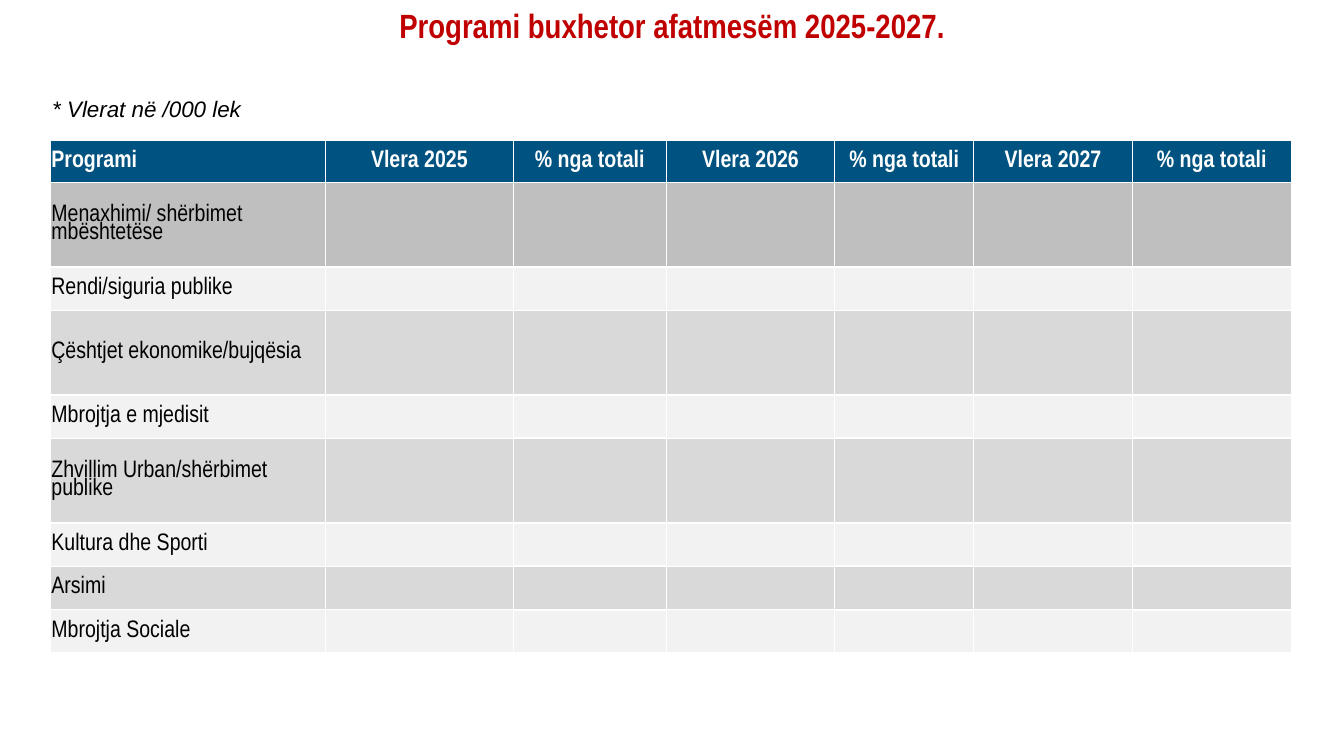
from dataclasses import dataclass

from lxml.etree import SubElement
from pptx import Presentation
from pptx.dml.color import RGBColor
from pptx.enum.text import MSO_ANCHOR, PP_ALIGN
from pptx.oxml.ns import qn
from pptx.util import Inches, Pt

WHITE = RGBColor(0xFF, 0xFF, 0xFF)
BLACK = RGBColor(0x00, 0x00, 0x00)
RED = RGBColor(0xC0, 0x00, 0x00)
BLUE = RGBColor(0x00, 0x53, 0x80)
MID_GREY = RGBColor(0xBF, 0xBF, 0xBF)
GREY = RGBColor(0xD9, 0xD9, 0xD9)
PALE_GREY = RGBColor(0xF2, 0xF2, 0xF2)


@dataclass
class Column:
    heading: str
    width: float


@dataclass
class Program:
    name: str
    height: float
    fill: RGBColor


COLUMNS = [
    Column("Programi", 2.73),
    Column("Vlera 2025", 1.86),
    Column("% nga totali", 1.52),
    Column("Vlera 2026", 1.67),
    Column("% nga totali", 1.38),
    Column("Vlera 2027", 1.57),
    Column("% nga totali", 1.58),
]
HEADER_HEIGHT = 0.42
PROGRAMS = [
    Program("Menaxhimi/ shërbimet mbështetëse", 0.84, MID_GREY),
    Program("Rendi/siguria publike", 0.43, PALE_GREY),
    Program("Çështjet ekonomike/bujqësia", 0.84, GREY),
    Program("Mbrojtja e mjedisit", 0.43, PALE_GREY),
    Program("Zhvillim Urban/shërbimet publike", 0.84, GREY),
    Program("Kultura dhe Sporti", 0.43, PALE_GREY),
    Program("Arsimi", 0.43, GREY),
    Program("Mbrojtja Sociale", 0.43, PALE_GREY),
]


def write(tf, text: str, *, size: float, font: str = "Arial Narrow",
          color: RGBColor = BLACK, bold: bool = False, italic: bool = False,
          align: PP_ALIGN = PP_ALIGN.LEFT, spacing: float = 1.0) -> None:
    p = tf.paragraphs[0]
    p.alignment = align
    p.line_spacing = spacing
    r = p.add_run()
    r.text = text
    r.font.name, r.font.size = font, Pt(size)
    r.font.bold, r.font.italic = bold, italic
    r.font.color.rgb = color


def add_text(s, left: float, top: float, width: float, height: float,
             text: str, **style) -> None:
    tf = s.shapes.add_textbox(Inches(left), Inches(top),
                              Inches(width), Inches(height)).text_frame
    tf.word_wrap = True
    write(tf, text, **style)


def set_borders(cell, top: float, bottom: float) -> None:
    """White borders; the side borders are always 1 pt."""
    tc_pr = cell._tc.get_or_add_tcPr()
    sides = [("a:lnL", 1), ("a:lnR", 1), ("a:lnT", top), ("a:lnB", bottom)]
    for i, (tag, width) in enumerate(sides):
        ln = SubElement(tc_pr, qn(tag), w=str(Pt(width)))
        SubElement(SubElement(ln, qn("a:solidFill")), qn("a:srgbClr"), val=str(WHITE))
        tc_pr.insert(i, ln)


def style_cell(cell, fill: RGBColor, top: float, bottom: float) -> None:
    cell.fill.solid()
    cell.fill.fore_color.rgb = fill
    cell.vertical_anchor = MSO_ANCHOR.MIDDLE
    cell.margin_left = cell.margin_right = cell.margin_top = Inches(0.01)
    cell.margin_bottom = 0
    set_borders(cell, top, bottom)


def add_budget_table(s) -> None:
    heights = [HEADER_HEIGHT] + [program.height for program in PROGRAMS]
    fills = [BLUE] + [program.fill for program in PROGRAMS]
    last = len(PROGRAMS)
    table = s.shapes.add_table(
        len(heights), len(COLUMNS), Inches(0.5), Inches(1.39),
        Inches(sum(column.width for column in COLUMNS)), Inches(sum(heights))).table
    for i, height in enumerate(heights):
        table.rows[i].height = Inches(height)
    for j, column in enumerate(COLUMNS):
        table.columns[j].width = Inches(column.width)
        # Percentage columns have heavier row lines
        inner = 1.5 if column.heading.startswith("%") else 1
        for i, fill in enumerate(fills):
            top = 1 if i == 0 else 1.5 if i == 1 else inner
            bottom = 1.5 if i == 0 else 1 if i == last else inner
            style_cell(table.cell(i, j), fill, top, bottom)
        write(table.cell(0, j).text_frame, column.heading, size=17, color=WHITE,
              bold=True, align=PP_ALIGN.CENTER if j else PP_ALIGN.LEFT, spacing=0.8)
    for i, program in enumerate(PROGRAMS, start=1):
        write(table.cell(i, 0).text_frame, program.name, size=17, spacing=0.8)


def main() -> None:
    prs = Presentation()
    prs.slide_width, prs.slide_height = Inches(13.33), Inches(7.5)
    s = prs.slides.add_slide(prs.slide_layouts[6])

    # Title and unit note
    add_text(s, 0, 0, 13.33, 0.83, "Programi buxhetor afatmesëm 2025-2027.",
             size=24, color=RED, bold=True, align=PP_ALIGN.CENTER)
    add_text(s, 0.42, 0.89, 2.13, 0.37, "* Vlerat në /000 lek",
             size=16, font="Arial", italic=True)

    # Budget by program
    add_budget_table(s)
    prs.save("out.pptx")


if __name__ == "__main__":
    main()
